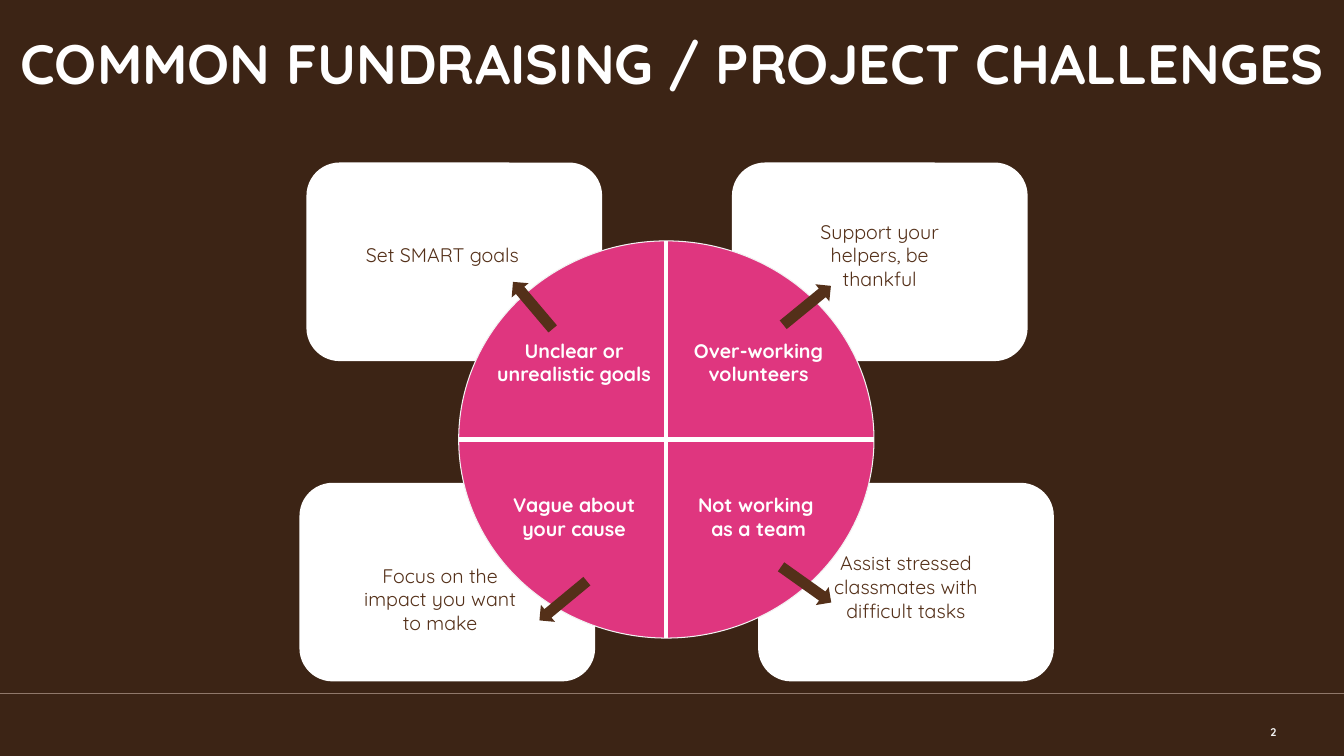
from lxml.etree import SubElement
from pptx import Presentation
from pptx.dml.color import RGBColor
from pptx.enum.shapes import MSO_CONNECTOR, MSO_SHAPE as Shape
from pptx.enum.text import MSO_ANCHOR as Anchor, MSO_AUTO_SIZE, PP_ALIGN as Align
from pptx.oxml.ns import qn
from pptx.util import Inches, Pt

TITLE = "COMMON FUNDRAISING / PROJECT CHALLENGES"
PAGE = "2"

# Positions are percentages of the slide's width and height.
QUADRANTS = [
    dict(challenge="Unclear or unrealistic goals", column=0, row=0, card=(22.8, 21.5),
         advice="Set SMART goals", advice_at=(26.48, 30.8), align=Align.LEFT,
         arrow=(37.36, 38.93), turn=229.8),
    dict(challenge="Over-working volunteers", column=1, row=0, card=(54.46, 21.5),
         advice="Support your helpers, be thankful", advice_at=(58.59, 27.73), align=Align.CENTER,
         arrow=(57.76, 38.93), turn=320.7),
    dict(challenge="Vague about your cause", column=0, row=1, card=(22.28, 63.87),
         advice="Focus on the impact you want to make", advice_at=(25.88, 73.2), align=Align.CENTER,
         arrow=(39.61, 78), turn=140.4),
    dict(challenge="Not working \vas a team", column=1, row=1, card=(56.41, 63.87),
         advice="Assist stressed classmates with difficult tasks", advice_at=(60.54, 71.6),
         align=Align.CENTER, arrow=(57.69, 75.87), turn=35.4),
]
CARD_SIZE = (22, 26.27)
ARROW_SIZE = (4.58, 2.93)
TEXT_SIZE = (13.73, 11)
CHALLENGE_TOPS = (43.47, 63.87)
CIRCLE = (34.13, 31.87, 30.9, 52.53)
FOOTER_Y = 91.73

FONT = "Quicksand"
DARK = RGBColor(0x3C, 0x24, 0x15)
BROWN = RGBColor(0x54, 0x30, 0x19)
PINK = RGBColor(0xDF, 0x36, 0x7F)
WHITE = RGBColor(0xFF, 0xFF, 0xFF)
PALE = RGBColor(0xF2, 0xF2, 0xF2)
TAN = RGBColor(0x90, 0x78, 0x6A)

deck = Presentation()
deck.slide_width, deck.slide_height = Inches(13.33), Inches(7.5)
slide = deck.slides.add_slide(deck.slide_layouts[5])
slide.background.fill.solid()
slide.background.fill.fore_color.rgb = DARK


def place(*shares):
    sides = (deck.slide_width, deck.slide_height) * 2
    return [round(share * side / 100) for share, side in zip(shares, sides)]


def write(holder, text, size, color, bold=False, align=Align.CENTER, anchor=Anchor.TOP, inset=0.1):
    frame = holder.text_frame
    frame.text = text
    frame.word_wrap = True
    frame.auto_size = MSO_AUTO_SIZE.NONE
    frame.vertical_anchor = anchor
    frame.margin_left = frame.margin_right = Inches(inset)
    frame.margin_top = frame.margin_bottom = Inches(inset)
    paragraph = frame.paragraphs[0]
    paragraph.alignment = align
    font = paragraph.font
    font.name, font.size, font.bold = FONT, Pt(size), bold
    font.color.rgb = color


def add_text(box, *content, **style):
    write(slide.shapes.add_textbox(*place(*box)), *content, **style)


def add_solid(kind, box, color):
    solid = slide.shapes.add_shape(kind, *place(*box))
    solid.shadow.inherit = False
    solid.fill.solid()
    solid.fill.fore_color.rgb = color
    solid.line.fill.background()
    return solid


def add_rule(ends, color, width):
    rule = slide.shapes.add_connector(MSO_CONNECTOR.STRAIGHT, *place(*ends))
    rule.line.color.rgb = color
    rule.line.width = Pt(width)
    SubElement(rule._element.spPr, qn("a:effectLst"))


title = slide.shapes.title
title.left, title.top, title.width, title.height = place(0.23, 0, 99.55, 16.4)
write(title, TITLE, 39.6, WHITE, bold=True, anchor=Anchor.MIDDLE, inset=0)
add_rule((0, FOOTER_Y, 100, FOOTER_Y), TAN, 0.75)
add_text((91.82, 94.13, 3.15, 5.33), PAGE, 8, PALE,
         bold=True, align=Align.RIGHT, anchor=Anchor.MIDDLE, inset=0)

for quadrant in QUADRANTS:
    card = add_solid(Shape.ROUNDED_RECTANGLE, quadrant["card"] + CARD_SIZE, WHITE)
    card.adjustments[0] = 0.167

circle = add_solid(Shape.OVAL, CIRCLE, PINK)
circle.line.color.rgb = PALE
circle.line.width = Pt(0.75)
left, top, width, height = CIRCLE
center_x, center_y = left + width / 2, top + height / 2
add_rule((center_x, top, center_x, top + height), WHITE, 3)
add_rule((left, center_y, left + width, center_y), WHITE, 3)

for quadrant in QUADRANTS:
    challenge_x = center_x + (quadrant["column"] - 1) * TEXT_SIZE[0]
    challenge_at = (challenge_x, CHALLENGE_TOPS[quadrant["row"]])
    add_text(challenge_at + TEXT_SIZE, quadrant["challenge"], 14, WHITE, bold=True)
    add_text(quadrant["advice_at"] + TEXT_SIZE, quadrant["advice"], 14, BROWN,
             align=quadrant["align"])
    arrow = add_solid(Shape.RIGHT_ARROW, quadrant["arrow"] + ARROW_SIZE, BROWN)
    arrow.rotation = quadrant["turn"]

deck.save("out.pptx")
